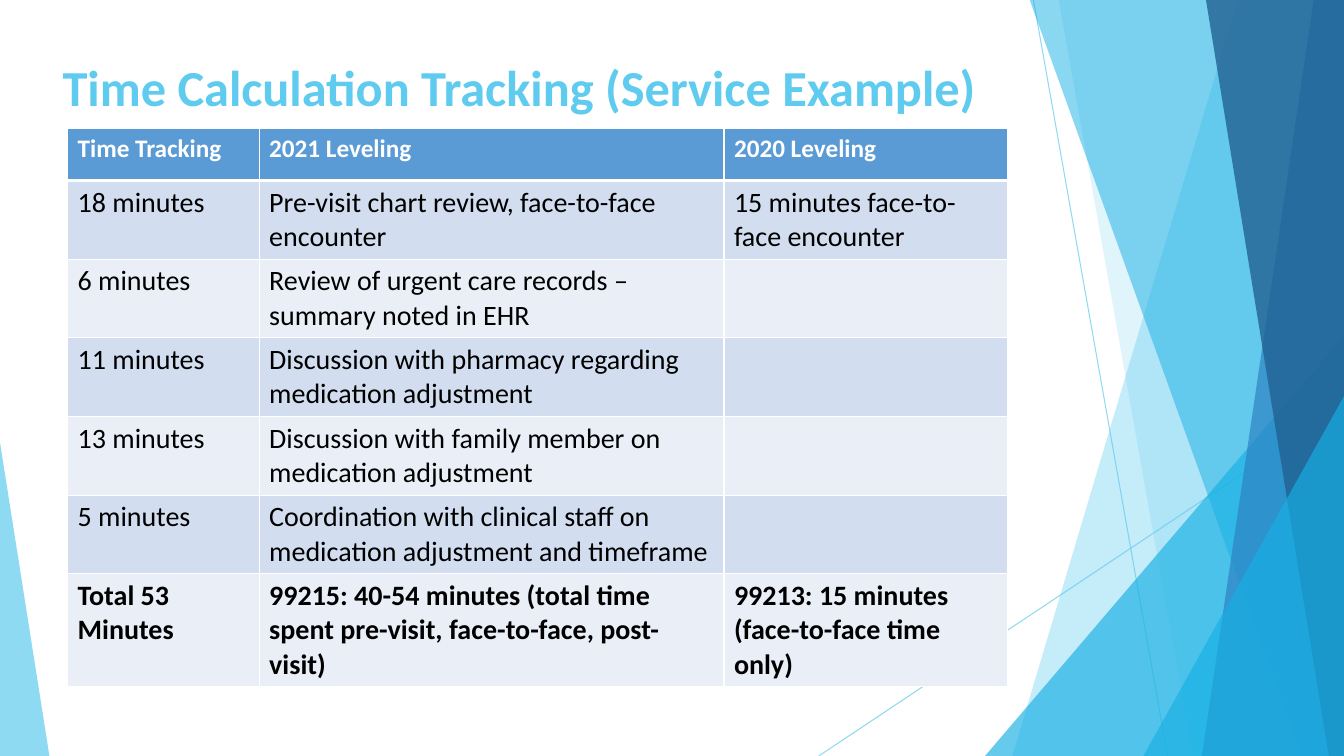
from lxml import etree
from pptx import Presentation, util as u
from pptx.dml.color import RGBColor
from pptx.enum import shapes, text
from pptx.oxml.ns import qn

# Content
TITLE = "Time Calculation Tracking (Service Example)"
ROWS = [
    ("Time Tracking", "2021 Leveling", "2020 Leveling"),
    ("18 minutes", "Pre-visit chart review, face-to-face encounter",
     "15 minutes face-to-face encounter"),
    ("6 minutes", "Review of urgent care records – summary noted in EHR", ""),
    ("11 minutes", "Discussion with pharmacy regarding medication adjustment", ""),
    ("13 minutes", "Discussion with family member on medication adjustment", ""),
    ("5 minutes", "Coordination with clinical staff on medication adjustment and timeframe", ""),
    ("Total 53 Minutes",
     "99215: 40-54 minutes (total time spent pre-visit, face-to-face, post-visit)",
     "99213: 15 minutes (face-to-face time only)"),
]
COL_WIDTHS = (1.9, 4.61, 2.81)
ROW_HEIGHTS = (0.52, 0.69, 0.72, 0.72, 0.72, 0.72, 0.99)

THEME = {
    "font": "Calibri", "title_size": 36, "head_size": 18, "body_size": 20,
    "sky": "5FCBEF", "cyan": "17B0E4", "blue": "2E83C3", "navy": "226292",
    "head": "5B9BD5", "bands": ("EAEFF7", "D2DEEF"),
    "white": "FFFFFF", "black": "000000",
}

# Facets, back to front
W, H, TOP = 13.33, 7.5, -0.01
RAYS = [((10.25, 0), (11.58, H)), ((W, 4.03), (8.12, H))]
# Bands run to the right edge: top-left x, bottom-left x, colour, opacity
# Triangles: left, top, width, apex position, colour, opacity
FACETS = [
    ("band", (12.28, 10.04), "sky", 36),
    ("band", (10.5, 11.83), "sky", 20),
    ("triangle", (9.77, 3.33, 3.56, 1), "cyan", 66),
    ("band", (10.21, 12.91), "cyan", 50),
    ("band", (13.03, 11.92), "blue", 70),
    ("band", (11.96, 13.18), "navy", 80),
    ("triangle", (11.34, 3.93, 1.99, 1), "cyan", 66),
    ("triangle", (0, 4.39, 0.49, 0), "sky", 70),
]


def color(name):
    return RGBColor.from_string(THEME.get(name, name))


def set_alpha(sp, percent):
    for clr in sp.element.spPr.iter(qn("a:srgbClr")):
        etree.SubElement(clr, qn("a:alpha")).set("val", str(percent * 1000))


def write(tf, words, size, fill, bold=False):
    tf.word_wrap = True
    p = tf.paragraphs[0]
    p.alignment = text.PP_ALIGN.LEFT
    r = p.add_run()
    r.text = words
    r.font.name, r.font.size, r.font.bold = THEME["font"], u.Pt(size), bold
    r.font.color.rgb = color(fill)


def add_ray(s, start, end):
    ln = s.shapes.add_connector(shapes.MSO_CONNECTOR.STRAIGHT,
                                *(u.Inches(v) for v in start + end))
    ln.line.color.rgb = color("sky")
    ln.line.width = u.Pt(0.75)
    set_alpha(ln, 70)
    etree.SubElement(ln.element.spPr, qn("a:effectLst"))


def add_facet(s, kind, geometry, fill, opacity):
    if kind == "band":
        top_x, bottom_x = geometry
        points = [(u.Inches(x), u.Inches(y)) for x, y in
                  ((top_x, TOP), (W, TOP), (W, H), (bottom_x, H))]
        fb = s.shapes.build_freeform(*points[0])
        fb.add_line_segments(points[1:], close=True)
        sp = fb.convert_to_shape()
    else:
        left, top, width, apex = geometry
        sp = s.shapes.add_shape(shapes.MSO_SHAPE.ISOSCELES_TRIANGLE,
                                *(u.Inches(v) for v in (left, top, width, H - top)))
        sp.adjustments[0] = apex
    sp.shadow.inherit = False
    sp.fill.solid()
    sp.fill.fore_color.rgb = color(fill)
    sp.line.fill.background()
    set_alpha(sp, opacity)


def set_borders(cell, row):
    tc_pr = cell._tc.get_or_add_tcPr()
    widths = {"lnL": 1, "lnR": 1, "lnT": 3 if row == 1 else 1, "lnB": 3 if row == 0 else 1}
    for i, (tag, width) in enumerate(widths.items()):
        ln = etree.Element(qn("a:" + tag), w=str(u.Pt(width)))
        fill = etree.SubElement(ln, qn("a:solidFill"))
        etree.SubElement(fill, qn("a:srgbClr"), val=THEME["white"])
        tc_pr.insert(i, ln)


def add_schedule(s):
    tbl = s.shapes.add_table(len(ROWS), len(COL_WIDTHS), u.Inches(0.67), u.Inches(1.27),
                             u.Inches(sum(COL_WIDTHS)), u.Inches(sum(ROW_HEIGHTS))).table
    for col, width in zip(tbl.columns, COL_WIDTHS):
        col.width = u.Inches(width)
    for i, (row, height) in enumerate(zip(ROWS, ROW_HEIGHTS)):
        tbl.rows[i].height = u.Inches(height)
        header, total = i == 0, i == len(ROWS) - 1
        for j, words in enumerate(row):
            cell = tbl.cell(i, j)
            cell.fill.solid()
            cell.fill.fore_color.rgb = color("head" if header else THEME["bands"][i % 2])
            set_borders(cell, i)
            if words:
                write(cell.text_frame, words,
                      THEME["head_size" if header else "body_size"],
                      "white" if header else "black", bold=header or total)


def main():
    prs = Presentation()
    prs.slide_width, prs.slide_height = u.Inches(W), u.Inches(H)
    s = prs.slides.add_slide(prs.slide_layouts[5])

    # Background facets
    for start, end in RAYS:
        add_ray(s, start, end)
    for facet in FACETS:
        add_facet(s, *facet)

    # Title, brought in front of the facets
    title = s.shapes.title
    title.left, title.top, title.width, title.height = (
        u.Inches(v) for v in (0.52, 0.44, 9.76, 0.84))
    title.text_frame.vertical_anchor = text.MSO_ANCHOR.MIDDLE
    write(title.text_frame, TITLE, THEME["title_size"], "sky", bold=True)
    s.shapes.element.append(title.element)

    # Time table
    add_schedule(s)
    prs.save("out.pptx")


if __name__ == "__main__":
    main()
